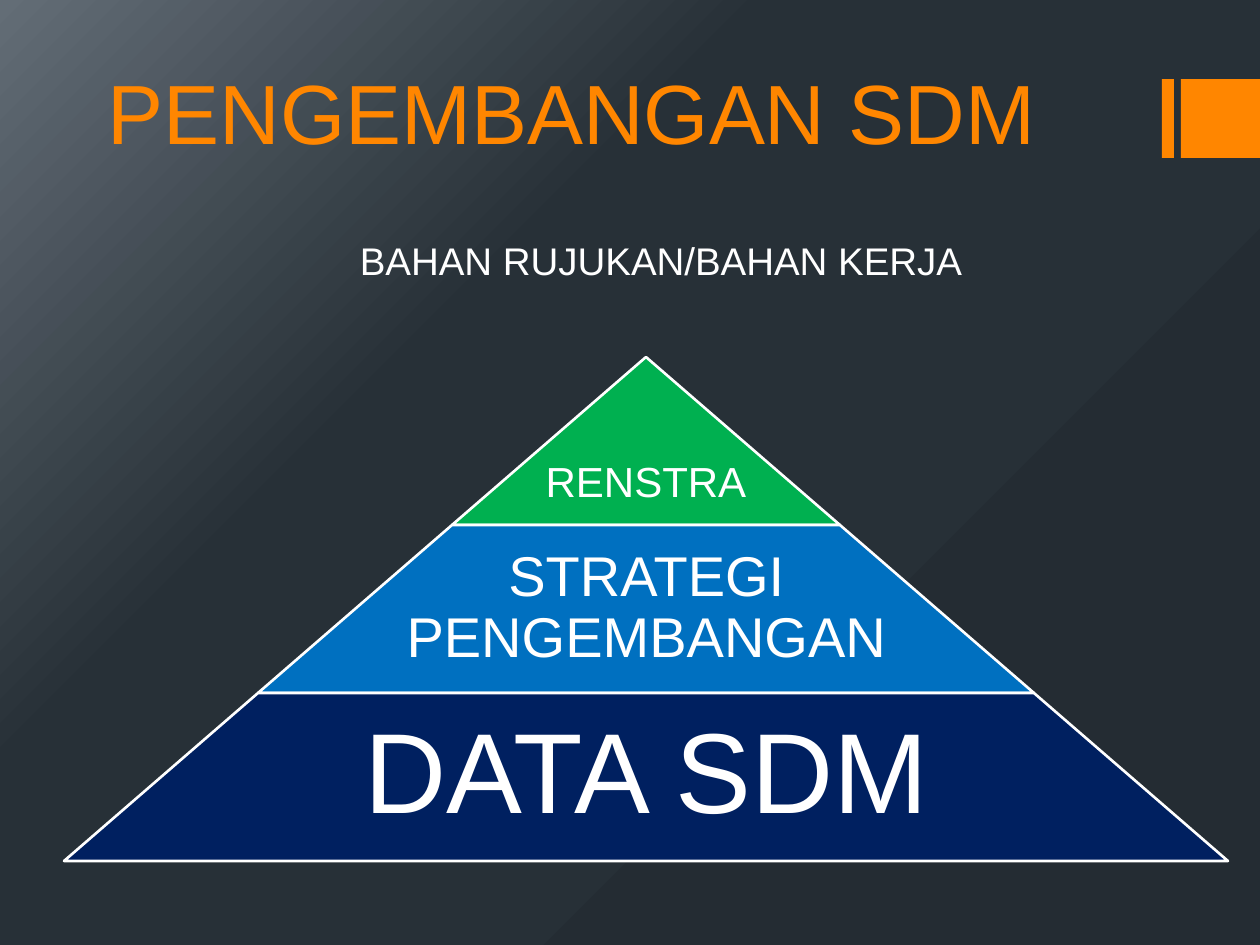
"""Build the PENGEMBANGAN SDM slide with its three-tier pyramid."""
from copy import deepcopy
from typing import NamedTuple

from pptx import Presentation
from pptx import util as u
from pptx.dml.color import RGBColor
from pptx.enum import shapes, text

EMU_PER_PX = 914400 / 126
FONT = "Arial"
COLORS = {
    "orange": "FF8600", "white": "FFFFFF", "green": "00B050", "blue": "0070C0",
    "navy": "002060", "light": "636D76", "slate": "273037", "dark": "242C33",
}
CENTER_X, PYRAMID_TOP, TIER_HEIGHT, TIER_SLOPE = 646, 357, 168, 194


class Box(NamedTuple):
    left: int
    top: int
    width: int
    height: int


class Tier(NamedTuple):
    label: str
    color: str
    size: int
    text_width: int
    inset: int
    bottom_inset: int
    anchor: text.MSO_ANCHOR


BARS = [Box(1162, 79, 12, 79), Box(1181, 79, 79, 79)]
TIERS = [
    Tier("RENSTRA", "green", 24, 388, 5, 18, text.MSO_ANCHOR.BOTTOM),
    Tier("STRATEGI PENGEMBANGAN", "blue", 32, 505, 5, 5, text.MSO_ANCHOR.MIDDLE),
    Tier("DATA SDM", "navy", 65, 757, 11, 11, text.MSO_ANCHOR.MIDDLE),
]


def px(length: int) -> int:
    return round(length * EMU_PER_PX)


def rgb(name: str) -> RGBColor:
    return RGBColor.from_string(COLORS[name])


def paint_background(slide) -> None:
    fill = slide.background.fill
    fill.gradient()
    fill.gradient_angle = 315
    stop_list = fill._fill._gradFill.gsLst
    stop_list.insert(1, deepcopy(stop_list[0]))
    stops = [(0, "light"), (0.35, "slate"), (1, "dark")]
    for stop, (position, color) in zip(fill.gradient_stops, stops):
        stop.position = position
        stop.color.rgb = rgb(color)


def write(shape, content: str, size: int, color: str, align, anchor) -> None:
    frame = shape.text_frame
    frame.text = content
    frame.word_wrap = True
    frame.auto_size = text.MSO_AUTO_SIZE.NONE
    frame.vertical_anchor = anchor
    paragraph = frame.paragraphs[0]
    paragraph.alignment = align
    font = paragraph.runs[0].font
    font.name, font.size = FONT, u.Pt(size)
    font.color.rgb = rgb(color)


def fill_placeholder(shape, box: Box, content: str, size: int, color: str, align, anchor) -> None:
    shape.left, shape.top, shape.width, shape.height = map(px, box)
    write(shape, content, size, color, align, anchor)


def add_filled(slide, kind, box: Box, color: str):
    shape = slide.shapes.add_shape(kind, *map(px, box))
    shape.shadow.inherit = False
    shape.fill.solid()
    shape.fill.fore_color.rgb = rgb(color)
    shape.line.fill.background()
    return shape


def add_tier(slide, level: int, tier: Tier) -> None:
    half_width = TIER_SLOPE * (level + 1)
    top = PYRAMID_TOP + TIER_HEIGHT * level
    box = Box(CENTER_X - half_width, top, 2 * half_width, TIER_HEIGHT)
    trapezoid = add_filled(slide, shapes.MSO_SHAPE.TRAPEZOID, box, tier.color)
    trapezoid.adjustments[0] = TIER_SLOPE / TIER_HEIGHT
    trapezoid.line.color.rgb = rgb("white")
    trapezoid.line.width = u.Pt(1.5)

    label_box = Box(CENTER_X - tier.text_width // 2, top, tier.text_width, TIER_HEIGHT)
    label = slide.shapes.add_textbox(*map(px, label_box))
    write(label, tier.label, tier.size, "white", text.PP_ALIGN.CENTER, tier.anchor)
    frame = label.text_frame
    frame.margin_left = frame.margin_right = frame.margin_top = px(tier.inset)
    frame.margin_bottom = px(tier.bottom_inset)
    frame.paragraphs[0].line_spacing = 0.9


def main() -> None:
    presentation = Presentation()
    presentation.slide_width, presentation.slide_height = px(1260), px(945)
    slide = presentation.slides.add_slide(presentation.slide_layouts[0])
    paint_background(slide)
    for bar in BARS:
        add_filled(slide, shapes.MSO_SHAPE.RECTANGLE, bar, "orange")
    title, subtitle = slide.placeholders
    fill_placeholder(title, Box(95, 42, 1071, 126), "PENGEMBANGAN SDM", 48, "orange",
                     text.PP_ALIGN.LEFT, text.MSO_ANCHOR.BOTTOM)
    fill_placeholder(subtitle, Box(220, 231, 882, 95), "BAHAN RUJUKAN/BAHAN KERJA", 22, "white",
                     text.PP_ALIGN.CENTER, text.MSO_ANCHOR.TOP)
    for level, tier in enumerate(TIERS):
        add_tier(slide, level, tier)
    presentation.save("out.pptx")


if __name__ == "__main__":
    main()
